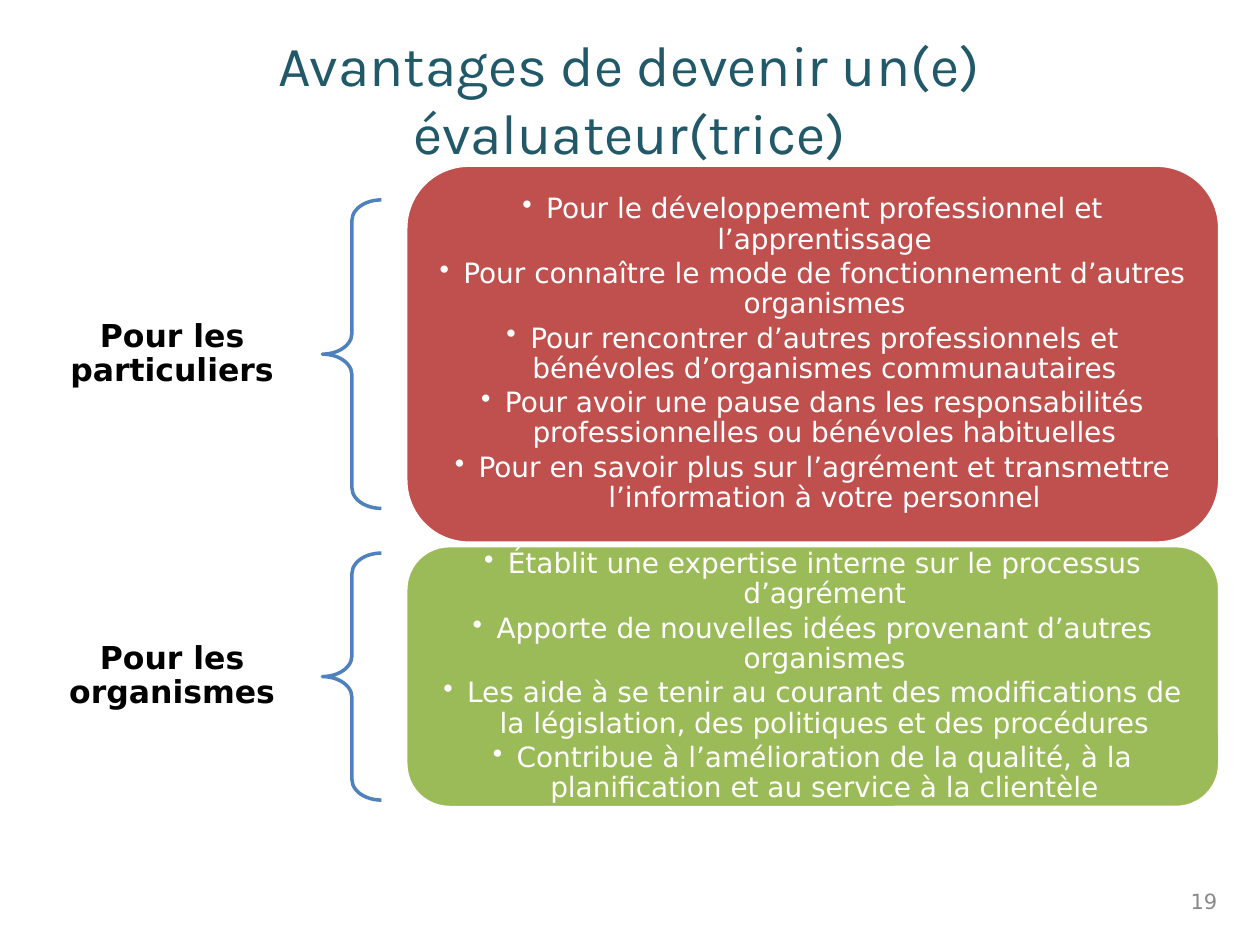
from lxml import etree
from pptx import Presentation
from pptx.dml.color import RGBColor
from pptx.enum.shapes import MSO_SHAPE
from pptx.enum.text import MSO_ANCHOR, MSO_AUTO_SIZE, PP_ALIGN
from pptx.oxml.ns import qn
from pptx.util import Cm, Pt

CENTER, RIGHT = PP_ALIGN.CENTER, PP_ALIGN.RIGHT
MIDDLE = MSO_ANCHOR.MIDDLE
LEFT_BRACE, ROUNDED = MSO_SHAPE.LEFT_BRACE, MSO_SHAPE.ROUNDED_RECTANGLE

COLORS = {"title": "215968", "label": "000000", "brace": "4F81BD", "red": "C0504D",
          "green": "9BBB59", "white": "FFFFFF", "number": "898989"}
BODY_FONT = "DejaVu Sans"

TITLE = "Avantages de devenir un(e) évaluateur(trice)"
SLIDE_NUMBER = "19"

# Vertical centre and heights in cm
GROUPS = [
    {"label": "Pour les particuliers", "color": "red",
     "center": 7.14, "box_height": 7.62, "brace_height": 6.22,
     "points": [
         "Pour le développement professionnel et l’apprentissage",
         "Pour connaître le mode de fonctionnement d’autres organismes",
         "Pour rencontrer d’autres professionnels et bénévoles d’organismes communautaires",
         "Pour avoir une pause dans les responsabilités professionnelles ou bénévoles habituelles",
         "Pour en savoir plus sur l’agrément et transmettre l’information à votre personnel"]},
    {"label": "Pour les organismes", "color": "green",
     "center": 13.64, "box_height": 5.28, "brace_height": 4.98,
     "points": [
         "Établit une expertise interne sur le processus d’agrément",
         "Apporte de nouvelles idées provenant d’autres organismes",
         "Les aide à se tenir au courant des modifications de la législation, des politiques et des procédures",
         "Contribue à l’amélioration de la qualité, à la planification et au service à la clientèle"]},
]

# Columns: left, width in cm
LABEL_COLUMN = (0.46, 6.02)
BRACE_COLUMN = (6.5, 1.19)
BOX_COLUMN = (8.18, 16.41)
LABEL_HEIGHT = 1.32


def color(name):
    return RGBColor.from_string(COLORS[name])


def place(column, center, height):
    left, width = column
    return Cm(left), Cm(center - height / 2), Cm(width), Cm(height)


def set_frame(frame, horizontal, vertical):
    frame.word_wrap = True
    frame.auto_size = MSO_AUTO_SIZE.NONE
    frame.vertical_anchor = MIDDLE
    frame.margin_left = frame.margin_right = Cm(horizontal)
    frame.margin_top = frame.margin_bottom = Cm(vertical)


def style(paragraph, size, color_name, alignment=CENTER, font=BODY_FONT, bold=False):
    paragraph.alignment = alignment
    paragraph.font.name = font
    paragraph.font.size = Pt(size)
    paragraph.font.bold = bold
    paragraph.font.color.rgb = color(color_name)


def add_bullet(paragraph, indent):
    properties = paragraph._p.get_or_add_pPr()
    properties.set("marL", str(Cm(indent)))
    properties.set("indent", str(-Cm(indent)))
    etree.SubElement(properties, qn("a:buChar")).set("char", "•")


def add_text(slide, text, position, horizontal, vertical):
    frame = slide.shapes.add_textbox(*position).text_frame
    set_frame(frame, horizontal, vertical)
    frame.text = text
    return frame.paragraphs[0]


def add_outlined(slide, kind, position, line_color):
    shape = slide.shapes.add_shape(kind, *position)
    shape.shadow.inherit = False
    shape.line.color.rgb = color(line_color)
    shape.line.width = Pt(2)
    return shape


def add_group(slide, group):
    center = group["center"]

    # Label
    label = add_text(slide, group["label"], place(LABEL_COLUMN, center, LABEL_HEIGHT), 0.36, 0.13)
    label.line_spacing = 0.9
    style(label, 18, "label", bold=True)

    # Brace
    brace = add_outlined(slide, LEFT_BRACE,
                         place(BRACE_COLUMN, center, group["brace_height"]), "brace")
    brace.fill.background()
    brace.adjustments[0] = 0.35

    # Box with its points
    box = add_outlined(slide, ROUNDED, place(BOX_COLUMN, center, group["box_height"]), "white")
    box.fill.solid()
    box.fill.fore_color.rgb = color(group["color"])
    frame = box.text_frame
    set_frame(frame, 0.18, 0.18)
    frame.text = "\n".join(group["points"])
    for paragraph in frame.paragraphs:
        paragraph.level = 1
        paragraph.line_spacing = 0.9
        paragraph.space_after = Pt(2.4)
        add_bullet(paragraph, 0.48)
        style(paragraph, 16, "white")


def main():
    presentation = Presentation()
    presentation.slide_width, presentation.slide_height = Cm(25.4), Cm(19.05)
    slide = presentation.slides.add_slide(presentation.slide_layouts[5])

    # Title
    title = slide.shapes.title
    title.left, title.top, title.width, title.height = Cm(2.21), Cm(0.76), Cm(20.96), Cm(2.44)
    set_frame(title.text_frame, 0.25, 0.13)
    title.text_frame.text = TITLE
    style(title.text_frame.paragraphs[0], 32.4, "title", font="Karla")

    for group in GROUPS:
        add_group(slide, group)

    # Slide number
    number = add_text(slide, SLIDE_NUMBER, (Cm(23.44), Cm(17.65), Cm(1.35), Cm(1.02)), 0.25, 0.13)
    style(number, 12, "number", alignment=RIGHT)

    presentation.save("out.pptx")


if __name__ == "__main__":
    main()
